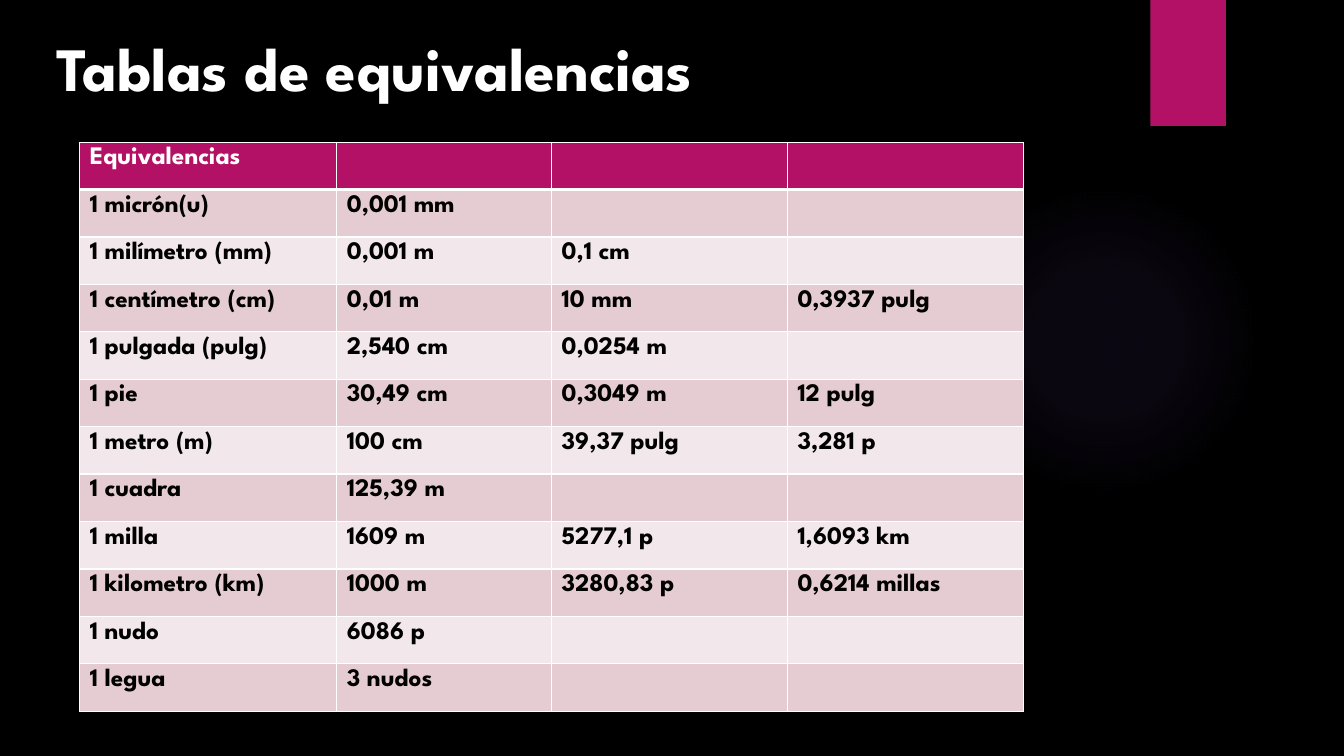
"""Build the slide with the table of length equivalences."""
from pptx import Presentation
from pptx.dml.color import RGBColor
from pptx.enum import shapes, text
from pptx.oxml import parse_xml
from pptx.oxml.ns import nsdecls
from pptx.util import Inches, Pt

TITLE = "Tablas de equivalencias"
ROWS = [
    ("Equivalencias",),
    ("1 micrón(u)", "0,001 mm"),
    ("1 milímetro (mm)", "0,001 m", "0,1 cm"),
    ("1 centímetro (cm)", "0,01 m", "10 mm", "0,3937 pulg"),
    ("1 pulgada (pulg)", "2,540 cm", "0,0254 m"),
    ("1 pie", "30,49 cm", "0,3049 m", "12 pulg"),
    ("1 metro (m)", "100 cm", "39,37 pulg", "3,281 p"),
    ("1 cuadra", "125,39 m"),
    ("1 milla", "1609 m", "5277,1 p", "1,6093 km"),
    ("1 kilometro (km)", "1000 m", "3280,83 p", "0,6214 millas"),
    ("1 nudo", "6086 p"),
    ("1 legua", "3 nudos"),
]
WIDTHS = (2.55, 2.13, 2.34, 2.34)
HEIGHT = 5.65
COLORS = {"black": "000000", "white": "FFFFFF", "accent": "B31166",
          "dark": "E5CCD3", "light": "F2E7EA", "glow": "9B6BF2"}
GLOW = ((0, 7), (36, 6), (69, 0), (100, 0))
FONT = {"name": "League Spartan", "bold": True}


def paint(fill, color):
    """Give a fill one solid colour."""
    fill.solid()
    fill.fore_color.rgb = RGBColor.from_string(COLORS[color])


def write(para, words, size, color):
    """Put styled words in a paragraph."""
    para.text = words
    for key, value in {**FONT, "size": Pt(size)}.items():
        setattr(para.font, key, value)
    para.font.color.rgb = RGBColor.from_string(COLORS[color])


def block(slide, kind, box):
    """Add a shape without line or shadow."""
    shape = slide.shapes.add_shape(kind, *map(Inches, box))
    shape.line.fill.background()
    shape.shadow.inherit = False
    return shape


def add_glow(slide):
    """Add the faint round glow."""
    oval = block(slide, shapes.MSO_SHAPE.OVAL, (9.41, 1.83, 3.08, 3.08))
    stops = "".join(
        f'<a:gs pos="{pos * 1000}"><a:srgbClr val="{COLORS["glow"]}">'
        f'<a:alpha val="{alpha * 1000}"/></a:srgbClr></a:gs>'
        for pos, alpha in GLOW)
    grad = parse_xml(
        f'<a:gradFill {nsdecls("a")}><a:gsLst>{stops}</a:gsLst>'
        '<a:path path="circle"><a:fillToRect l="50000" t="50000" '
        'r="50000" b="50000"/></a:path></a:gradFill>')
    oval._element.spPr.find("{*}prstGeom").addnext(grad)


def add_title(slide):
    """Add the title at the top left."""
    frame = slide.shapes.add_textbox(
        *map(Inches, (0.49, 0, 9.18, 1.11))).text_frame
    sides = dict.fromkeys(("left", "right", "top", "bottom"), Inches(0.07))
    for side, inset in sides.items():
        setattr(frame, f"margin_{side}", inset)
    frame.word_wrap = True
    frame.vertical_anchor = text.MSO_ANCHOR.BOTTOM
    frame.paragraphs[0].line_spacing = 0.9
    write(frame.paragraphs[0], TITLE, 44, "white")


def edge(cell, row):
    """Draw white borders, thick below the header."""
    thick = {("B", 0), ("T", 1)}
    for side in "LRTB":
        width = Pt(3 if (side, row) in thick else 1)
        cell._tc.get_or_add_tcPr().append(parse_xml(
            f'<a:ln{side} {nsdecls("a")} w="{width}"><a:solidFill>'
            f'<a:srgbClr val="{COLORS["white"]}"/></a:solidFill></a:ln{side}>'))


def add_grid(slide):
    """Add the table of equivalences."""
    box = map(Inches, (0.79, 1.41, sum(WIDTHS), HEIGHT))
    grid = slide.shapes.add_table(len(ROWS), len(WIDTHS), *box).table
    for col, width in zip(grid.columns, WIDTHS):
        col.width = Inches(width)
    for r, words in enumerate(ROWS):
        grid.rows[r].height = Inches(HEIGHT / len(ROWS))
        fill = "accent" if r == 0 else ("light", "dark")[r % 2]
        for c in range(len(WIDTHS)):
            cell = grid.cell(r, c)
            edge(cell, r)
            paint(cell.fill, fill)
            if c < len(words):
                write(cell.text_frame.paragraphs[0], words[c], 18,
                      "black" if r else "white")


def main():
    """Make and save the deck."""
    deck = Presentation()
    deck.slide_width, deck.slide_height = Inches(13.33), Inches(7.5)
    slide = deck.slides.add_slide(deck.slide_layouts[6])
    paint(slide.background.fill, "black")
    add_glow(slide)
    tab = block(slide, shapes.MSO_SHAPE.RECTANGLE, (11.41, 0, 0.75, 1.25))
    paint(tab.fill, "accent")
    add_title(slide)
    add_grid(slide)
    deck.save("out.pptx")


if __name__ == "__main__":
    main()
